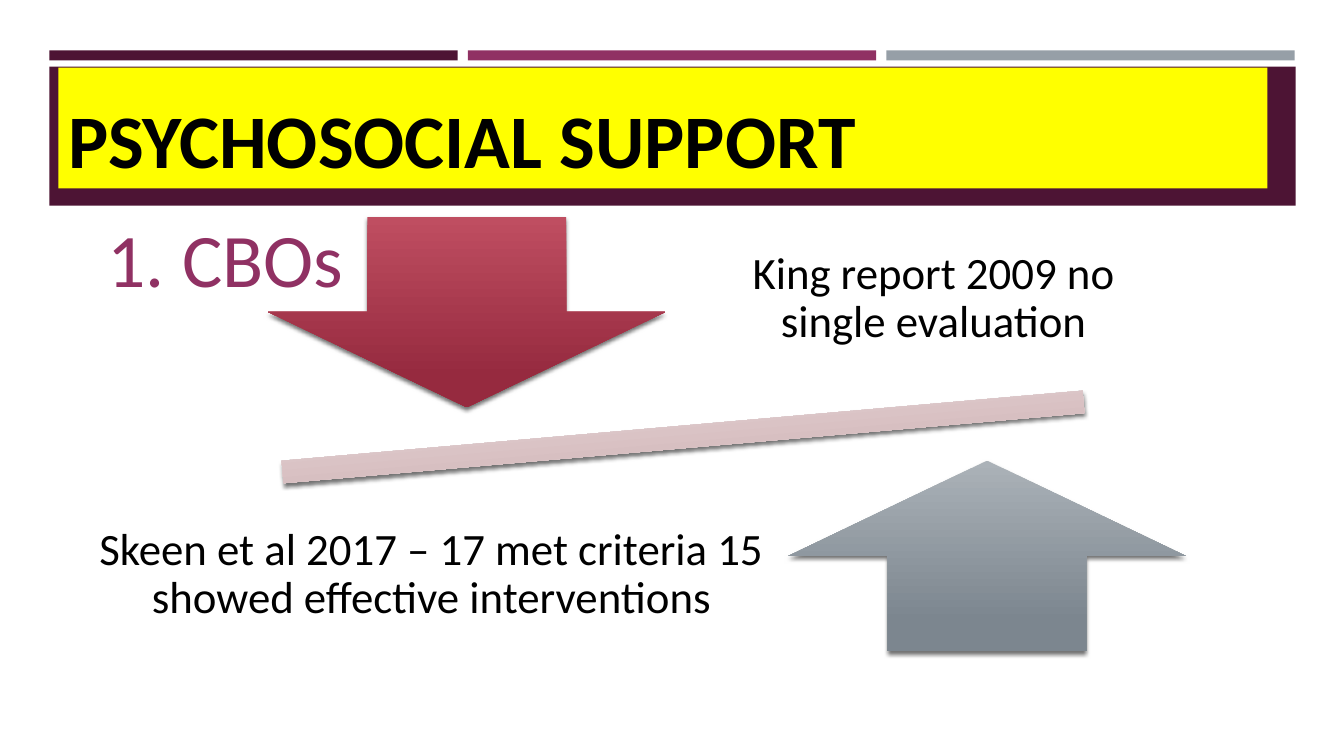
from lxml.etree import SubElement
from pptx import Presentation
from pptx.dml.color import RGBColor
from pptx.enum.shapes import MSO_SHAPE
from pptx.enum.text import MSO_ANCHOR, PP_ALIGN
from pptx.oxml.ns import qn
from pptx.util import Inches, Pt


def color(hex_code):
    return RGBColor.from_string(hex_code)


def add_block(preset, left, top, width, height, fill=None):
    block = slide.shapes.add_shape(
        preset, Inches(left), Inches(top), Inches(width), Inches(height))
    block.shadow.inherit = False
    block.line.fill.background()
    if fill:
        block.fill.solid()
        block.fill.fore_color.rgb = color(fill)
    else:
        block.fill.background()
    return block


deck = Presentation()
deck.slide_width, deck.slide_height = Inches(13.33), Inches(7.5)
slide = deck.slides.add_slide(deck.slide_layouts[6])

margin, stripe_width, stripe_gap = 0.49, 4.05, 0.1
for column, stripe_color in enumerate(["4D1434", "903163", "969FA7"]):
    add_block(MSO_SHAPE.RECTANGLE, margin + column * (stripe_width + stripe_gap),
              0.5, stripe_width, 0.1, stripe_color)
add_block(MSO_SHAPE.RECTANGLE, margin, 0.66, 12.36, 1.38, "4D1434")

title = add_block(MSO_SHAPE.RECTANGLE, 0.58, 0.67, 11.99, 1.2, "FFFF00")
heading = add_block(MSO_SHAPE.RECTANGLE, 0.97, 2.46, 5.56, 0.59)

balance = [
    (MSO_SHAPE.MATH_MINUS, 1.35, 3.86, 10.85, 0.95, 355, "F4EBEC", "C7A6A9"),
    (MSO_SHAPE.DOWN_ARROW, 2.66, 2.15, 3.94, 1.89, 0, "BF4E61", "962A3F"),
    (MSO_SHAPE.UP_ARROW, 7.82, 4.57, 3.94, 1.89, 0, "ABB2B8", "7C868F"),
]
for preset, left, top, width, height, tilt, light, dark in balance:
    part = add_block(preset, left, top, width, height)
    part.rotation = tilt
    part.fill.gradient()
    part.fill.gradient_angle = 270
    for stop, position, shade in zip(part.fill.gradient_stops, (0, 0.84), (light, dark)):
        stop.position = position
        stop.color.rgb = color(shade)
    effects = part._element.spPr.find(qn("a:effectLst"))
    shadow = SubElement(effects, qn("a:outerShdw"), blurRad=str(Pt(3)), dist=str(Pt(2)),
                        dir="5400000", algn="ctr", rotWithShape="0")
    shadow_color = SubElement(shadow, qn("a:srgbClr"), val="000000")
    SubElement(shadow_color, qn("a:alpha"), val="55000")

king_report = add_block(MSO_SHAPE.RECTANGLE, 7.16, 1.97, 4.2, 1.99)
skeen_review = add_block(MSO_SHAPE.RECTANGLE, 0.21, 4.71, 8.14, 1.99)

texts = [
    (title, "PSYCHOSOCIAL SUPPORT", 54, "000000", True),
    (heading, "1. CBOs", 54, "903163", False),
    (king_report, "King report 2009 no single evaluation", 32, "000000", False),
    (skeen_review, "Skeen et al 2017 – 17 met criteria 15 showed effective interventions",
     32, "000000", False),
]
for holder, wording, size, ink, bold in texts:
    frame = holder.text_frame
    frame.word_wrap = True
    paragraph = frame.paragraphs[0]
    if size == 32:
        frame.vertical_anchor = MSO_ANCHOR.MIDDLE
        frame.margin_left = frame.margin_right = Inches(0.25)
        frame.margin_top = frame.margin_bottom = Inches(0.25)
        paragraph.alignment = PP_ALIGN.CENTER
        paragraph.line_spacing = 0.9
    else:
        frame.vertical_anchor = MSO_ANCHOR.BOTTOM
        paragraph.alignment = PP_ALIGN.LEFT
    run = paragraph.add_run()
    run.text = wording
    run.font.name = "Calibri"
    run.font.size = Pt(size)
    run.font.bold = bold
    run.font.color.rgb = color(ink)

deck.save("out.pptx")
